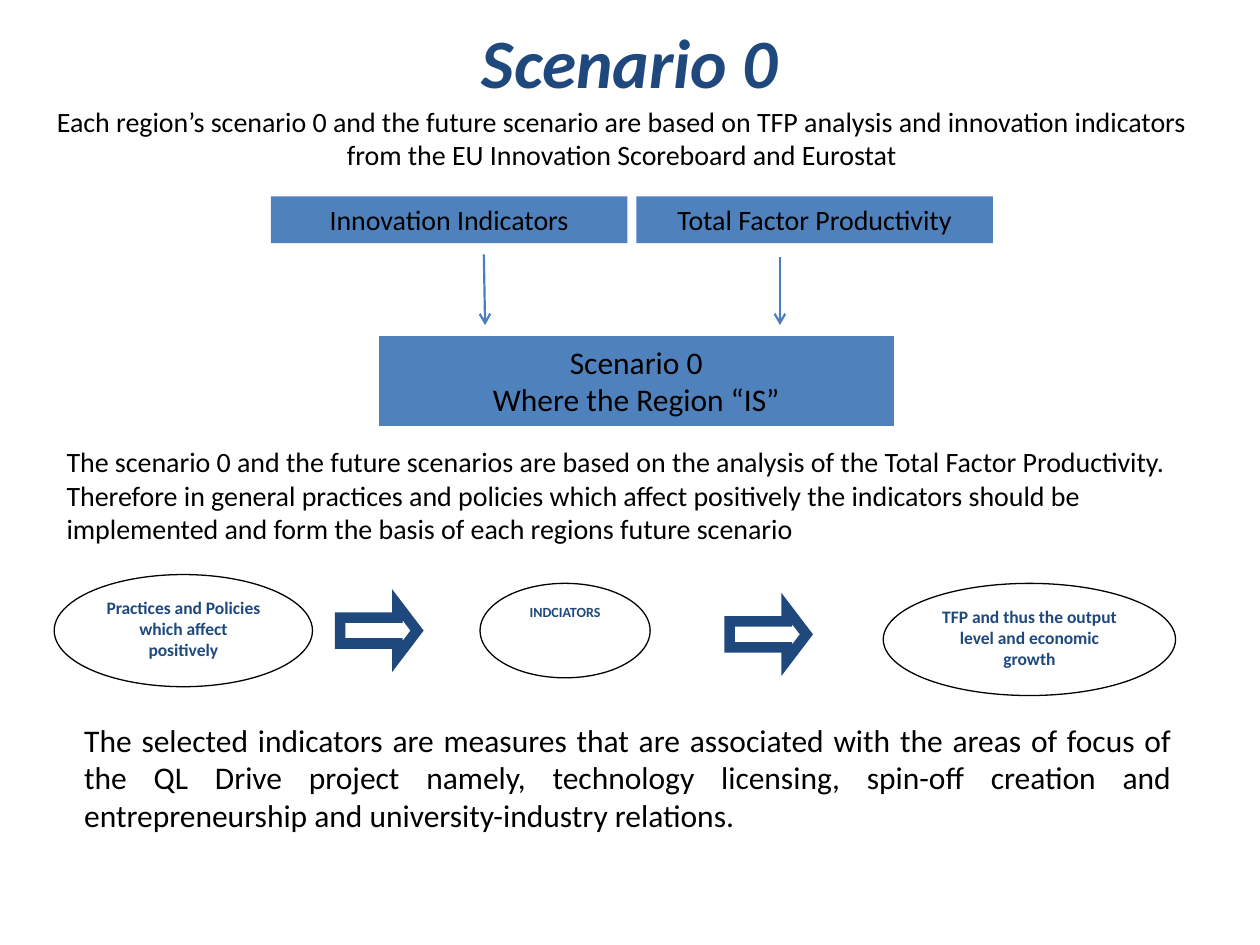
from lxml import etree
from pptx import Presentation
from pptx.dml.color import RGBColor
from pptx.enum.shapes import MSO_CONNECTOR, MSO_SHAPE as SHAPE
from pptx.enum.text import MSO_ANCHOR as ANCHOR, PP_ALIGN as ALIGN
from pptx.oxml.ns import qn
from pptx.util import Inches, Pt

NAVY = RGBColor(0x1F, 0x49, 0x7D)
BLUE = RGBColor(0x4F, 0x81, 0xBD)
ARROW_BLUE = RGBColor(0x4B, 0x7E, 0xBC)
BLACK = RGBColor(0, 0, 0)
WHITE = RGBColor(0xFF, 0xFF, 0xFF)

prs = Presentation()
prs.slide_width, prs.slide_height = Inches(10), Inches(7.5)
s = prs.slides.add_slide(prs.slide_layouts[6])


def write(sp, text, size, align, color=BLACK, bold=False, italic=False,
          anchor=ANCHOR.TOP, after=0):
    tf = sp.text_frame
    tf.word_wrap = True
    tf.vertical_anchor = anchor
    tf.text = text
    for p in tf.paragraphs:
        p.alignment = align
        p.space_after = Pt(after)
        for r in p.runs:
            r.font.name, r.font.size = "Calibri", Pt(size)
            r.font.bold, r.font.italic = bold, italic
            r.font.color.rgb = color


def add_shape(kind, box, fill, line=None, width=0.75):
    sp = s.shapes.add_shape(kind, *map(Inches, box))
    sp.shadow.inherit = False
    sp.fill.solid()
    sp.fill.fore_color.rgb = fill
    if line is None:
        sp.line.fill.background()
    else:
        sp.line.color.rgb = line
        sp.line.width = Pt(width)
    return sp


# Title
sp = s.shapes.add_textbox(Inches(0.5), Inches(0.3), Inches(9), Inches(0.37))
write(sp, "Scenario 0", 39.6, ALIGN.CENTER, NAVY, True, True, ANCHOR.MIDDLE)

# Body paragraphs
paragraphs = [
    ((0.27, 0.78, 9.33, 0.64), 16, ALIGN.CENTER,
     "Each region’s scenario 0 and the future scenario are based on TFP analysis "
     "and innovation indicators from the EU Innovation Scoreboard and Eurostat"),
    ((0.43, 3.48, 9.25, 0.91), 16, ALIGN.LEFT,
     "The scenario 0 and the future scenarios are based on the analysis of the "
     "Total Factor Productivity. Therefore in general practices and policies which "
     "affect positively the indicators should be implemented and form the basis of "
     "each regions future scenario"),
    ((0.57, 5.67, 8.83, 1.01), 18, ALIGN.JUSTIFY,
     "The selected indicators are measures that are associated with the areas of "
     "focus of the QL Drive project namely, technology licensing, spin-off creation "
     "and entrepreneurship and university-industry relations."),
]
for box, size, align, text in paragraphs:
    sp = s.shapes.add_textbox(*map(Inches, box))
    write(sp, text, size, align)

# Blue boxes: two inputs and the resulting scenario
boxes = [
    ((2.15, 1.56, 2.83, 0.37), 16, None, "Innovation Indicators"),
    ((5.05, 1.56, 2.83, 0.37), 16, None, "Total Factor Productivity"),
    ((3.01, 2.67, 4.08, 0.71), 18, BLUE, "Scenario 0\nWhere the Region “IS”"),
]
for box, size, line, text in boxes:
    write(add_shape(SHAPE.RECTANGLE, box, BLUE, line), text, size, ALIGN.CENTER)

# Thin arrows down to the scenario
for x1, y1, x2 in [(3.84, 2.02, 3.85), (6.19, 2.04, 6.19)]:
    line = s.shapes.add_connector(MSO_CONNECTOR.STRAIGHT, Inches(x1), Inches(y1),
                                  Inches(x2), Inches(2.58))
    line.line.color.rgb = ARROW_BLUE
    line.line.width = Pt(1.25)
    etree.SubElement(line.line._get_or_add_ln(), qn("a:tailEnd"), type="arrow")
    etree.SubElement(line._element.spPr, qn("a:effectLst"))

# Ellipses of the cause chain
ellipses = [
    ((0.43, 4.56, 2.05, 0.89), 10, "Practices and Policies which affect positively"),
    ((3.81, 4.63, 1.35, 0.75), 8, "INDCIATORS"),
    ((7.01, 4.63, 2.32, 0.89), 10, "TFP and thus the output level and economic growth"),
]
for box, size, text in ellipses:
    sp = add_shape(SHAPE.OVAL, box, WHITE, BLACK)
    write(sp, text, size, ALIGN.CENTER, NAVY, bold=True, after=10)

# Block arrows between the ellipses, with sharp corners
for x, y in [(2.7, 4.8), (5.79, 4.83)]:
    sp = add_shape(SHAPE.RIGHT_ARROW, (x, y, 0.61, 0.41), WHITE, NAVY, 6)
    sp.adjustments[0], sp.adjustments[1] = 0.5, 0.38
    etree.SubElement(sp.line._get_or_add_ln(), qn("a:miter"), lim="800000")

prs.save("out.pptx")
